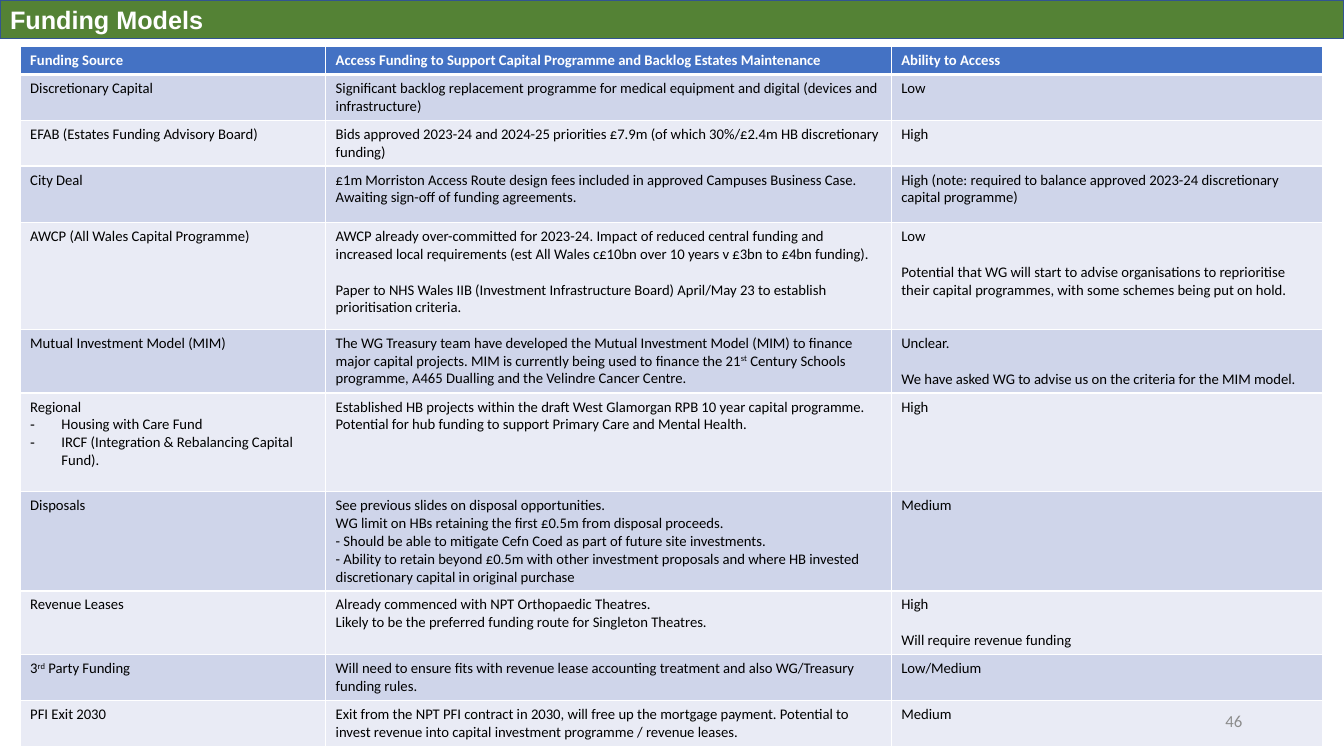
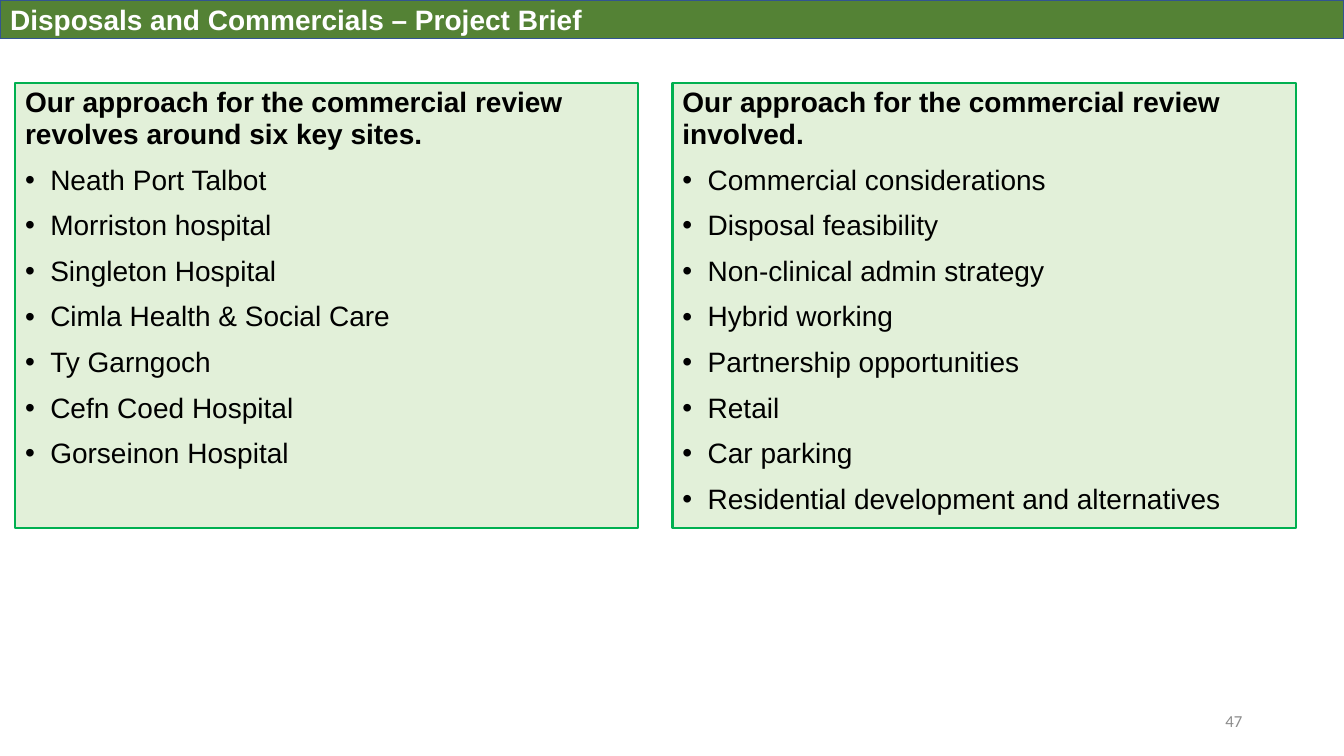
from dataclasses import dataclass

from lxml import etree
from pptx import Presentation
from pptx.dml.color import RGBColor
from pptx.enum.shapes import MSO_SHAPE
from pptx.enum.text import MSO_ANCHOR, MSO_AUTO_SIZE, PP_ALIGN
from pptx.oxml.ns import qn
from pptx.util import Inches, Pt

LEFT, RIGHT = PP_ALIGN.LEFT, PP_ALIGN.RIGHT
TOP, MIDDLE = MSO_ANCHOR.TOP, MSO_ANCHOR.MIDDLE
RECT, NO_FIT = MSO_SHAPE.RECTANGLE, MSO_AUTO_SIZE.NONE
TITLE_ONLY = 5


@dataclass(frozen=True)
class Theme:
    heading_font: str = "Arial"
    body_font: str = "Calibri"
    white: str = "FFFFFF"
    black: str = "000000"
    grey: str = "8C8C8C"
    band: str = "548235"
    band_line: str = "325491"
    header: str = "4472C4"
    rows: tuple = ("CFD5EA", "E9EBF5")
    panel: str = "E2F0D9"
    panel_line: str = "00B050"
    panel_size: float = 20
    table_size: float = 10.5
    number_size: float = 12


T = Theme()
SLIDE_W, SLIDE_H = 13.33, 7.5

FUNDING_HEADER = ("Funding Source",
                  "Access Funding to Support Capital Programme and Backlog Estates Maintenance",
                  "Ability to Access")
# Cell markup: "\n" new paragraph, "\n\n" spaced paragraph, "* " dashed item, ^x^ superscript
FUNDING_ROWS = [
    (0.45, "Discretionary Capital",
     "Significant backlog replacement programme for medical equipment and digital "
     "(devices and infrastructure)",
     "Low"),
    (0.45, "EFAB (Estates Funding Advisory Board)",
     "Bids approved 2023-24 and 2024-25 priorities £7.9m (of which 30%/£2.4m HB "
     "discretionary funding)",
     "High"),
    (0.56, "City Deal",
     "£1m Morriston Access Route design fees included in approved Campuses Business Case. "
     "Awaiting sign-off of funding agreements.",
     "High (note: required to balance approved 2023-24 discretionary capital programme)"),
    (1.06, "AWCP (All Wales Capital Programme)",
     "AWCP already over-committed for 2023-24. Impact of reduced central funding and "
     "increased local requirements (est All Wales c£10bn over 10 years v £3bn to £4bn "
     "funding).\n\nPaper to NHS Wales IIB (Investment Infrastructure Board) April/May 23 to "
     "establish prioritisation criteria.",
     "Low\n\nPotential that WG will start to advise organisations to reprioritise their "
     "capital programmes, with some schemes being put on hold."),
    (0.63, "Mutual Investment Model (MIM)",
     "The WG Treasury team have developed the Mutual Investment Model (MIM) to finance major "
     "capital projects. MIM is currently being used to finance the 21^st^ Century Schools "
     "programme, A465 Dualling and the Velindre Cancer Centre.",
     "Unclear.\n\nWe have asked WG to advise us on the criteria for the MIM model."),
    (0.98, "Regional\n* Housing with Care Fund\n"
           "* IRCF (Integration & Rebalancing Capital Fund).",
     "Established HB projects within the draft West Glamorgan RPB 10 year capital programme. "
     "Potential for hub funding to support Primary Care and Mental Health.",
     "High"),
    (0.98, "Disposals",
     "See previous slides on disposal opportunities.\n"
     "WG limit on HBs retaining the first £0.5m from disposal proceeds.\n"
     "- Should be able to mitigate Cefn Coed as part of future site investments.\n"
     "- Ability to retain beyond £0.5m with other investment proposals and where HB invested "
     "discretionary capital in original purchase",
     "Medium"),
    (0.63, "Revenue Leases",
     "Already commenced with NPT Orthopaedic Theatres.\n"
     "Likely to be the preferred funding route for Singleton Theatres.",
     "High\n\nWill require revenue funding"),
    (0.45, "3^rd^ Party Funding",
     "Will need to ensure fits with revenue lease accounting treatment and also WG/Treasury "
     "funding rules.",
     "Low/Medium"),
    (0.45, "PFI Exit 2030",
     "Exit from the NPT PFI contract in 2030, will free up the mortgage payment. Potential to "
     "invest revenue into capital investment programme / revenue leases.",
     "Medium"),
]

PANELS = [
    ("Our approach for the commercial review revolves around six key sites.",
     ["Neath Port Talbot", "Morriston hospital", "Singleton Hospital",
      "Cimla Health & Social Care", "Ty Garngoch", "Cefn Coed Hospital",
      "Gorseinon Hospital"]),
    ("Our approach for the commercial review involved.",
     ["Commercial considerations", "Disposal feasibility", "Non-clinical admin strategy",
      "Hybrid working", "Partnership opportunities", "Retail", "Car parking",
      "Residential development and alternatives"]),
]


def rgb(color):
    return RGBColor.from_string(color)


def inches(*lengths):
    return [Inches(n) for n in lengths]


def add_bullet(p, char, indent):
    pPr = p._p.get_or_add_pPr()
    pPr.set("marL", str(Inches(indent)))
    pPr.set("indent", str(-Inches(indent)))
    etree.SubElement(pPr, qn("a:buFont")).set("typeface", T.heading_font)
    etree.SubElement(pPr, qn("a:buChar")).set("char", char)


def add_text(tf, text, *, first=False, font=T.body_font, size=T.table_size, color=T.black,
             bold=False, align=LEFT, before=0, spacing=None, bullet=None, indent=0):
    """Write one paragraph; text between carets is superscript."""
    p = tf.paragraphs[0] if first else tf.add_paragraph()
    p.alignment = align
    p.space_before = Pt(before)
    if spacing:
        p.line_spacing = spacing
    if bullet:
        add_bullet(p, bullet, indent)
    for i, part in enumerate(text.split("^")):
        r = p.add_run()
        r.text = part
        r.font.name, r.font.size, r.font.bold = font, Pt(size), bold
        r.font.color.rgb = rgb(color)
        if i % 2:
            r.font._element.set("baseline", "30000")


def set_frame(tf, anchor):
    tf.word_wrap = True
    tf.auto_size = NO_FIT
    tf.vertical_anchor = anchor


def paint(sp, fill, line, width):
    sp.fill.solid()
    sp.fill.fore_color.rgb = rgb(fill)
    sp.line.color.rgb = rgb(line)
    sp.line.width = Pt(width)


def set_borders(cell, bottom):
    tcPr = cell._tc.get_or_add_tcPr()
    for side, width in (("L", 1), ("R", 1), ("T", 1), ("B", bottom)):
        ln = etree.SubElement(tcPr, qn(f"a:ln{side}"), w=str(Pt(width)))
        fill = etree.SubElement(ln, qn("a:solidFill"))
        etree.SubElement(fill, qn("a:srgbClr"), val=T.white)


def fill_cell(cell, text, fill, *, border=1, **fmt):
    set_borders(cell, border)
    cell.fill.solid()
    cell.fill.fore_color.rgb = rgb(fill)
    first = True
    for block in text.split("\n\n"):
        for i, line in enumerate(block.split("\n")):
            item = line.startswith("* ")
            add_text(cell.text_frame, line.removeprefix("* "), first=first,
                     before=0 if first or i else T.table_size * 1.22,
                     bullet="-" if item else None, indent=0.31, **fmt)
            first = False


def add_funding_table(s, left, top, widths):
    heights = [0.28] + [row[0] for row in FUNDING_ROWS]
    table = s.shapes.add_table(len(heights), len(widths), *inches(
        left, top, sum(widths), sum(heights))).table
    for col, width in zip(table.columns, widths):
        col.width = Inches(width)
    for row, height in zip(table.rows, heights):
        row.height = Inches(height)
    for c, text in enumerate(FUNDING_HEADER):
        fill_cell(table.cell(0, c), text, T.header, border=3, color=T.white, bold=True)
    for r, (_, *texts) in enumerate(FUNDING_ROWS):
        for c, text in enumerate(texts):
            fill_cell(table.cell(r + 1, c), text, T.rows[r % 2])


def add_panel(s, left, top, width, height, heading, items):
    sp = s.shapes.add_shape(RECT, *inches(left, top, width, height))
    sp.shadow.inherit = False
    paint(sp, T.panel, T.panel_line, 1.5)
    tf = sp.text_frame
    set_frame(tf, TOP)
    fmt = dict(font=T.heading_font, size=T.panel_size, spacing=0.94)
    add_text(tf, heading, first=True, bold=True, **fmt)
    for item in items:
        add_text(tf, item, before=10, bullet="•", indent=0.25, **fmt)


def add_titled_slide(prs, title, size, number):
    """Add a slide with the green title band and the page number."""
    s = prs.slides.add_slide(prs.slide_layouts[TITLE_ONLY])
    sp = s.shapes.title
    sp.left, sp.top, sp.width, sp.height = inches(0, 0, SLIDE_W, 0.38)
    paint(sp, T.band, T.band_line, 1)
    set_frame(sp.text_frame, MIDDLE)
    add_text(sp.text_frame, title, first=True, font=T.heading_font, size=size,
             color=T.white, bold=True)
    return s


def add_page_number(s, number):
    tf = s.shapes.add_textbox(*inches(9.42, 6.95, 3, 0.4)).text_frame
    set_frame(tf, MIDDLE)
    add_text(tf, str(number), first=True, size=T.number_size, color=T.grey, align=RIGHT)


def build_funding_slide(prs):
    s = add_titled_slide(prs, "Funding Models", 18, 46)
    add_funding_table(s, 0.2, 0.46, (3.03, 5.61, 4.28))
    add_page_number(s, 46)


def build_brief_slide(prs):
    s = add_titled_slide(prs, "Disposals and Commercials – Project Brief", 20, 47)
    left, width, gap = 0.15, 6.18, 0.34
    for i, (heading, items) in enumerate(PANELS):
        add_panel(s, left + i * (width + gap), 0.82, width, 4.42, heading, items)
    add_page_number(s, 47)


def main():
    prs = Presentation()
    prs.slide_width, prs.slide_height = inches(SLIDE_W, SLIDE_H)
    build_funding_slide(prs)
    build_brief_slide(prs)
    prs.save("out.pptx")


if __name__ == "__main__":
    main()
